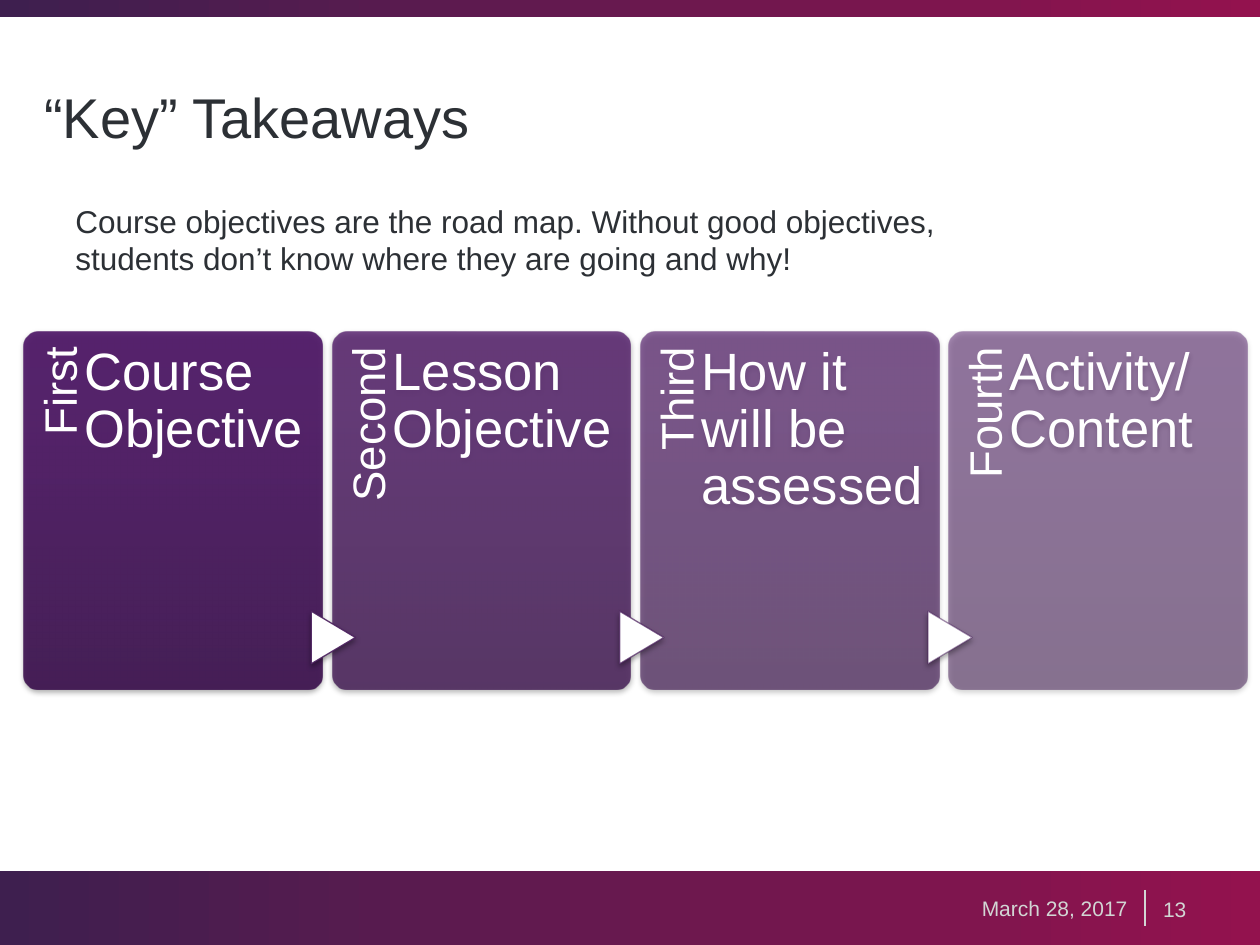
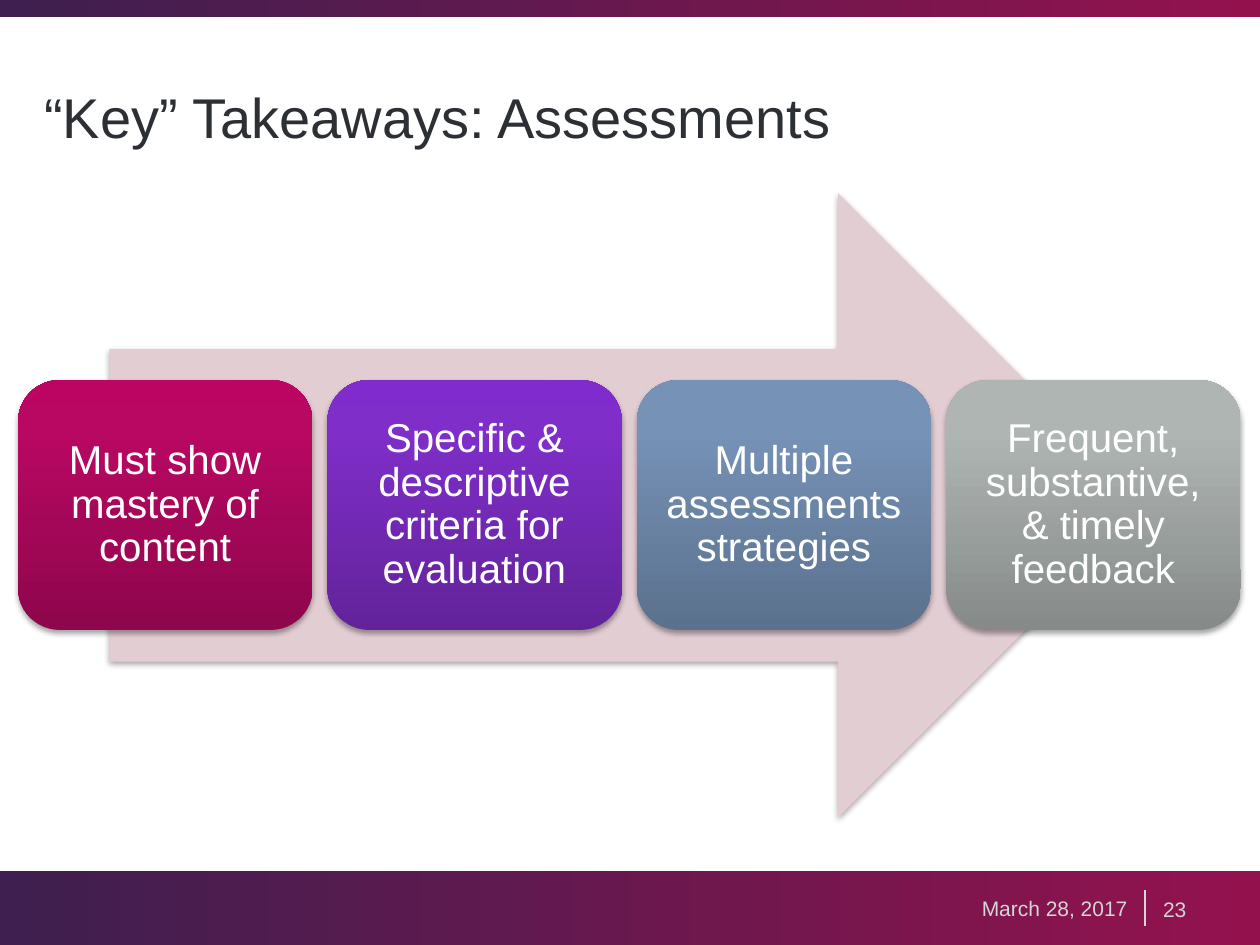
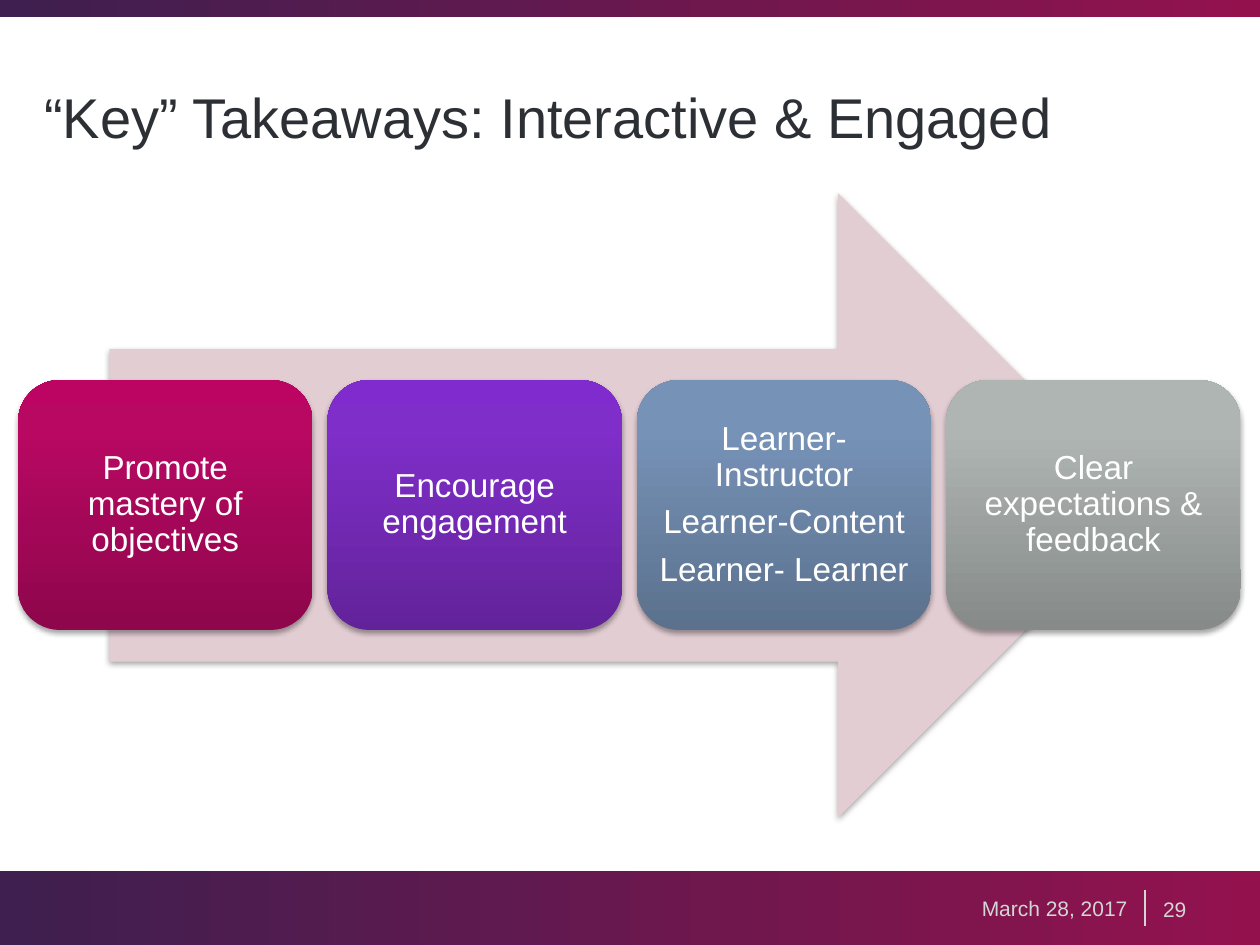
from dataclasses import dataclass
from typing import NamedTuple, Optional

from lxml import etree
from pptx import Presentation
from pptx.dml.color import RGBColor
from pptx.enum.shapes import MSO_CONNECTOR, MSO_SHAPE
from pptx.enum.text import MSO_ANCHOR, MSO_AUTO_SIZE, PP_ALIGN
from pptx.oxml.ns import qn
from pptx.shapes.autoshape import Shape
from pptx.slide import Slide
from pptx.text.text import TextFrame
from pptx.util import Pt

RECTANGLE = MSO_SHAPE.RECTANGLE
ROUNDED = MSO_SHAPE.ROUNDED_RECTANGLE
RIGHT_ARROW = MSO_SHAPE.RIGHT_ARROW
TRIANGLE = MSO_SHAPE.FLOWCHART_EXTRACT
STRAIGHT = MSO_CONNECTOR.STRAIGHT
LEFT, CENTER, RIGHT = PP_ALIGN.LEFT, PP_ALIGN.CENTER, PP_ALIGN.RIGHT
TOP, MIDDLE = MSO_ANCHOR.TOP, MSO_ANCHOR.MIDDLE
GROW = MSO_AUTO_SIZE.SHAPE_TO_FIT_TEXT
TITLE_ONLY = 5


class Box(NamedTuple):
    """Left, top, width and height in points."""
    left: float
    top: float
    width: float
    height: float

    def moved(self, distance: float) -> "Box":
        return self._replace(left=self.left + distance)

    def lengths(self) -> list[Pt]:
        return [Pt(value) for value in self]


class Stop(NamedTuple):
    position: int
    color: str


class TextStyle(NamedTuple):
    size: float
    color: str
    align: PP_ALIGN = LEFT
    line_spacing: Optional[float] = None
    space_after: float = 0  # share of the type size


class Margins(NamedTuple):
    left: float = 7.2
    top: float = 3.6
    right: float = 7.2
    bottom: float = 3.6


@dataclass(frozen=True)
class Theme:
    font: str = "Arial"
    white: str = "FFFFFF"
    ink: str = "2C3035"
    footer: str = "D2D6D4"
    arrow: str = "E2CDD3"
    outline: str = "4B205E"
    shadow: str = "000000"
    band: tuple = (Stop(0, "3E1F4F"), Stop(100, "93124E"))
    purple: tuple = (Stop(0, "3B114D"), Stop(80, "4C1664"), Stop(100, "4D1566"))
    row: tuple = (
        (Stop(0, "8E064C"), Stop(80, "B80862"), Stop(100, "BC0463")),
        (Stop(0, "62239A"), Stop(80, "7F2EC9"), Stop(100, "802BCD")),
        (Stop(0, "5B718D"), Stop(80, "7692B7"), Stop(100, "7593B9")),
        (Stop(0, "868B89"), Stop(80, "AFB5B2"), Stop(100, "AFB6B3")),
    )
    title_size: float = 32
    lead_size: float = 18
    footer_size: float = 12
    label_size: float = 26
    step_size: float = 30


THEME = Theme()


@dataclass(frozen=True)
class Step:
    label: str
    text: str
    opacity: int
    outline_opacity: int = 100


@dataclass(frozen=True)
class ArrowSlide:
    title: str
    number: int
    size: float
    margin: float
    cards: tuple[tuple[str, ...], ...]


STEPS = (
    Step("First", "Course Objective", 90),
    Step("Second", "Lesson Objective", 77, 90),
    Step("Third", "How it will be assessed", 63, 70),
    Step("Fourth", "Activity/ Content", 50, 50),
)

ARROW_SLIDES = (
    ArrowSlide("“Key” Takeaways: Assessments", 23, 23, 7.2, (
        ("Must show mastery of content",),
        ("Specific & descriptive criteria for evaluation",),
        ("Multiple assessments strategies",),
        ("Frequent, substantive, & timely feedback",),
    )),
    ArrowSlide("“Key” Takeaways: Interactive & Engaged", 29, 19, 5.8, (
        ("Promote mastery of objectives",),
        ("Encourage engagement",),
        ("Learner-Instructor", "Learner-Content", "Learner- Learner"),
        ("Clear expectations & feedback",),
    )),
)


# Formatting helpers
def add_color(parent: etree._Element, color: str, opacity: int = 100) -> None:
    element = etree.SubElement(parent, qn("a:srgbClr"), val=color)
    if opacity < 100:
        etree.SubElement(element, qn("a:alpha"), val=str(opacity * 1000))


def set_gradient(shape: Shape, stops: tuple[Stop, ...], angle: int, opacity: int = 100) -> None:
    shape.fill.background()
    properties = shape.element.spPr
    gradient = etree.Element(qn("a:gradFill"), rotWithShape="1")
    stop_list = etree.SubElement(gradient, qn("a:gsLst"))
    for stop in stops:
        add_color(etree.SubElement(stop_list, qn("a:gs"), pos=str(stop.position * 1000)),
                  stop.color, opacity)
    etree.SubElement(gradient, qn("a:lin"), ang=str(angle * 60000), scaled="0")
    properties.replace(properties.find(qn("a:noFill")), gradient)


def set_shadow(shape: Shape) -> None:
    effects = shape.element.spPr.find(qn("a:effectLst"))
    shadow = etree.SubElement(effects, qn("a:outerShdw"), blurRad=str(Pt(3.1)),
                              dist=str(Pt(1.8)), dir="5400000", rotWithShape="0")
    add_color(shadow, THEME.shadow, 35)


def write(frame: TextFrame, lines: tuple[str, ...], style: TextStyle, anchor: MSO_ANCHOR = TOP,
          margins: Margins = Margins(), wrap: bool = True) -> None:
    frame.word_wrap = wrap
    frame.vertical_anchor = anchor
    frame.margin_left, frame.margin_top, frame.margin_right, frame.margin_bottom = map(Pt, margins)
    frame.text = "\n".join(lines)
    for paragraph in frame.paragraphs:
        paragraph.alignment = style.align
        paragraph.line_spacing = style.line_spacing
        paragraph.space_before = Pt(0)
        paragraph.space_after = Pt(style.size * style.space_after)
        paragraph.font.name = THEME.font
        paragraph.font.size = Pt(style.size)
        paragraph.font.color.rgb = RGBColor.from_string(style.color)


def add_plain_shape(slide: Slide, kind: MSO_SHAPE, box: Box) -> Shape:
    shape = slide.shapes.add_shape(kind, *box.lengths())
    shape.shadow.inherit = False
    shape.line.fill.background()
    return shape


def add_solid_shape(slide: Slide, kind: MSO_SHAPE, box: Box, color: str) -> Shape:
    shape = add_plain_shape(slide, kind, box)
    shape.fill.solid()
    shape.fill.fore_color.rgb = RGBColor.from_string(color)
    set_shadow(shape)
    return shape


def add_card(slide: Slide, box: Box, stops: tuple[Stop, ...], opacity: int = 100) -> Shape:
    card = add_plain_shape(slide, ROUNDED, box)
    set_gradient(card, stops, 270, opacity)
    set_shadow(card)
    return card


# Shared frame: title, bands and footer
def add_framed_slide(presentation: Presentation, title: str, number: int) -> Slide:
    slide = presentation.slides.add_slide(presentation.slide_layouts[TITLE_ONLY])
    heading = slide.shapes.title
    heading.left, heading.top, heading.width, heading.height = Box(18, 21.6, 684, 90).lengths()
    write(heading.text_frame, (title,), TextStyle(THEME.title_size, THEME.ink), MIDDLE)

    for box in (Box(-0.6, 498, 721.2, 43), Box(-0.6, -0.6, 721.2, 10.5)):
        set_gradient(add_plain_shape(slide, RECTANGLE, box), THEME.band, 0)

    divider = slide.shapes.add_connector(STRAIGHT, Pt(654.4), Pt(508.5), Pt(654.4), Pt(529.3))
    divider.line.color.rgb = RGBColor.from_string(THEME.footer)
    divider.line.width = Pt(1)
    etree.SubElement(divider.element.spPr, qn("a:effectLst"))

    footers = ((str(number), Box(657.5, 497.5, 63, 43.5), LEFT),
               ("March 28, 2017", Box(484, 497.2, 167.5, 43.9), RIGHT))
    for text, box, align in footers:
        footer = slide.shapes.add_textbox(*box.lengths())
        write(footer.text_frame, (text,), TextStyle(THEME.footer_size, THEME.footer, align),
              MIDDLE, Margins(top=0, bottom=0), wrap=False)
    return slide


# Four numbered steps joined by small triangles
def add_step(slide: Slide, step: Step, offset: float, joined: bool) -> None:
    card = add_card(slide, Box(13.7, 189.3, 170.5, 204.4).moved(offset), THEME.purple, step.opacity)
    card.adjustments[0] = 0.05
    write(card.text_frame, (step.text,),
          TextStyle(THEME.step_size, THEME.white, LEFT, 0.9, 0.35),
          margins=Margins(32, 5.5, 4, 0))

    label = slide.shapes.add_textbox(*Box(-52.5, 255.8, 167.6, 34.1).moved(offset).lengths())
    label.rotation = 270
    write(label.text_frame, (step.label,),
          TextStyle(THEME.label_size, THEME.white, RIGHT, 0.9, 0.35),
          margins=Margins(0, 7.2, 9.2, 0))

    if joined:
        triangle = add_solid_shape(slide, TRIANGLE, Box(-0.7, 351.7, 30, 25.2).moved(offset),
                                   THEME.white)
        triangle.rotation = 90
        triangle.line.color.rgb = RGBColor.from_string(THEME.outline)
        triangle.line.width = Pt(0.75)
        color = triangle.element.spPr.find(f"{qn('a:ln')}//{qn('a:srgbClr')}")
        etree.SubElement(color, qn("a:alpha"), val=str(step.outline_opacity * 1000))


def build_steps_slide(presentation: Presentation) -> None:
    slide = add_framed_slide(presentation, "“Key” Takeaways", 13)
    lead = slide.shapes.add_textbox(*Box(36, 111.6, 553, 51).lengths())
    write(lead.text_frame, ("Course objectives are the road map. Without good objectives, "
                            "students don’t know where they are going and why!",),
          TextStyle(THEME.lead_size, THEME.ink))
    lead.text_frame.auto_size = GROW
    for index, step in enumerate(STEPS):
        add_step(slide, step, index * 176.2, joined=index > 0)


# Four cards over a wide arrow
def build_arrow_slide(presentation: Presentation, content: ArrowSlide) -> None:
    slide = add_framed_slide(presentation, content.title, content.number)
    add_solid_shape(slide, RIGHT_ARROW, Box(62.6, 110.2, 594.7, 357.1), THEME.arrow)
    style = TextStyle(content.size, THEME.white, CENTER, 0.9, 0.35)
    first_card = Box(10.3, 217.2, 168.3, 142.8)
    for index, (lines, stops) in enumerate(zip(content.cards, THEME.row)):
        card = add_card(slide, first_card.moved(index * 176.8), stops)
        write(card.text_frame, lines, style, MIDDLE, Margins(*[content.margin] * 4))


def main() -> None:
    presentation = Presentation()
    presentation.slide_width, presentation.slide_height = Pt(720), Pt(540)
    build_steps_slide(presentation)
    for content in ARROW_SLIDES:
        build_arrow_slide(presentation, content)
    presentation.save("out.pptx")


if __name__ == "__main__":
    main()
